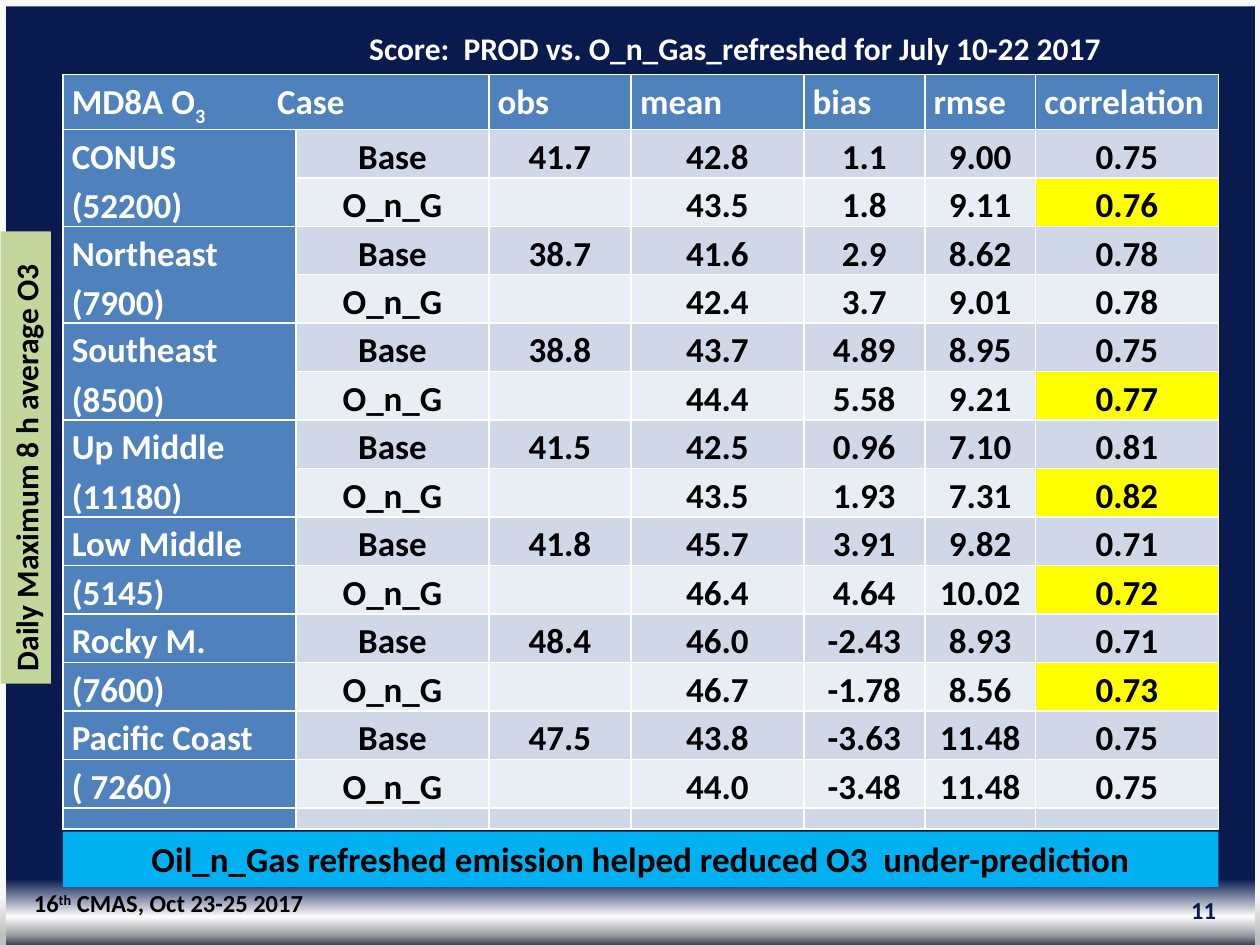
from lxml import etree
from pptx import Presentation, util as u
from pptx.dml.color import RGBColor
from pptx.enum import shapes, text
from pptx.oxml.ns import qn

FONT = "Calibri"
COLORS = {
    "navy": "091A4F", "white": "FFFFFF", "black": "000000", "header": "4F81BD",
    "base": "D0D8E8", "refreshed": "E9EDF4", "improved": "FFFF00",
    "green": "C3D69B", "cyan": "00B0F0", "edge": "F8F8F8",
}
BACKDROP = [(93, COLORS["navy"]), (97, "FEFEFE"), (99, "9799A0"), (100, "3C414E")]
EDGE_FADE = [(0, COLORS["edge"]), (95, "F5F5F5"), (99, "BFBFBF")]

TITLE = "Score:  PROD vs. O_n_Gas_refreshed for July 10-22 2017"
SIDE_LABEL = "Daily Maximum 8 h average O3"
CONCLUSION = "Oil_n_Gas refreshed emission helped reduced O3  under-prediction"
FOOTER = [("16", 0), ("th", 30), (" CMAS, Oct 23-25 2017", 0)]
PAGE = "11"

CORNER = [("MD8A O", 0), ("3", -25), ("\tCase", 0)]
HEADINGS = ["obs", "mean", "bias", "rmse", "correlation"]
CASES = ("Base", "O_n_G")
# region, sample count, observed, then mean, bias, rmse, correlation of each case
REGIONS = [
    ("CONUS", "(52200)", "41.7", "42.8 1.1 9.00 0.75", "43.5 1.8 9.11 0.76"),
    ("Northeast", "(7900)", "38.7", "41.6 2.9 8.62 0.78", "42.4 3.7 9.01 0.78"),
    ("Southeast", "(8500)", "38.8", "43.7 4.89 8.95 0.75", "44.4 5.58 9.21 0.77"),
    ("Up Middle", "(11180)", "41.5", "42.5 0.96 7.10 0.81", "43.5 1.93 7.31 0.82"),
    ("Low Middle", "(5145)", "41.8", "45.7 3.91 9.82 0.71", "46.4 4.64 10.02 0.72"),
    ("Rocky M.", "(7600)", "48.4", "46.0 -2.43 8.93 0.71", "46.7 -1.78 8.56 0.73"),
    ("Pacific Coast", "( 7260)", "47.5", "43.8 -3.63 11.48 0.75", "44.0 -3.48 11.48 0.75"),
]
MERGED_REGIONS = 4  # the first regions share one label cell over both cases
COLUMNS = [1.85, 1.53, 1.13, 1.37, 0.96, 0.88, 1.45]
HEADER_ROW, CASE_ROW, LAST_ROW = 0.38, 0.385, 0.17
LEFT, TABLE_TOP = 0.5, 0.59
CASE_TAB = 1.63

LEFT_ALIGN, CENTER, RIGHT = (text.PP_ALIGN.LEFT, text.PP_ALIGN.CENTER, text.PP_ALIGN.RIGHT)


def rgb(name):
    return RGBColor.from_string(COLORS[name])


def inches(*lengths):
    return [u.Inches(length) for length in lengths]


def fade_down(fill, owner, stops):
    """Fill with a top-to-bottom gradient; owner is the XML element holding the fill."""
    fill.gradient()
    fill.gradient_angle = 270
    stop_list = next(owner.iter(qn("a:gsLst")))
    for stop in list(stop_list):
        stop_list.remove(stop)
    for percent, color in stops:
        stop = etree.SubElement(stop_list, qn("a:gs"), pos=str(percent * 1000))
        etree.SubElement(stop, qn("a:srgbClr"), val=color)


def write(frame, runs, size, color, align=LEFT_ALIGN):
    """Fill the first paragraph with a string or with (text, baseline) runs."""
    paragraph = frame.paragraphs[0]
    paragraph.alignment = align
    for words, baseline in [(runs, 0)] if isinstance(runs, str) else runs:
        run = paragraph.add_run()
        run.text = words
        font = run.font
        font.name, font.size, font.bold = FONT, u.Pt(size), True
        font.color.rgb = rgb(color)
        if baseline:
            run._r.get_or_add_rPr().set("baseline", str(baseline * 1000))
    return paragraph


def fit_frame(shape, wrap=False):
    frame = shape.text_frame
    frame.word_wrap = wrap
    frame.auto_size = text.MSO_AUTO_SIZE.SHAPE_TO_FIT_TEXT
    frame.vertical_anchor = text.MSO_ANCHOR.TOP
    return frame


def add_block(slide, box, color):
    block = slide.shapes.add_shape(shapes.MSO_SHAPE.RECTANGLE, *inches(*box))
    block.shadow.inherit = False
    block.line.fill.background()
    block.fill.solid()
    block.fill.fore_color.rgb = rgb(color)
    return block


def set_cell(cell, runs, fill, color="black", align=CENTER):
    cell.fill.solid()
    cell.fill.fore_color.rgb = rgb(fill)
    cell.margin_left = cell.margin_right = u.Inches(0.07)
    cell.margin_top = cell.margin_bottom = 0
    if runs:
        paragraph = write(cell.text_frame, runs, 20, color, align)
        paragraph.line_spacing, paragraph.space_after = 1.15, u.Pt(3)


def add_scores(slide):
    case_rows = len(REGIONS) * len(CASES)
    heights = [HEADER_ROW] + [CASE_ROW] * case_rows + [LAST_ROW]
    table = slide.shapes.add_table(
        len(heights), len(COLUMNS),
        *inches(LEFT, TABLE_TOP, sum(COLUMNS), sum(heights))).table
    for column, width in zip(table.columns, COLUMNS):
        column.width = u.Inches(width)
    for row, height in zip(table.rows, heights):
        row.height = u.Inches(height)

    corner = table.cell(0, 0)
    corner.merge(table.cell(0, 1))
    set_cell(corner, CORNER, "header", "white", LEFT_ALIGN)
    tabs = etree.SubElement(corner.text_frame.paragraphs[0]._p.pPr, qn("a:tabLst"))
    etree.SubElement(tabs, qn("a:tab"), pos=str(u.Inches(CASE_TAB)), algn="l")
    for col, heading in enumerate(HEADINGS, 2):
        set_cell(table.cell(0, col), heading, "header", "white", LEFT_ALIGN)

    for index, (region, count, observed, *scores) in enumerate(REGIONS):
        top = 1 + index * len(CASES)
        labels = [region, count]
        if index < MERGED_REGIONS:
            table.cell(top, 0).merge(table.cell(top + 1, 0))
            labels = [f"{region} {count}", ""]
        base, refreshed = [line.split() for line in scores]
        improved = float(refreshed[-1]) > float(base[-1])
        rows = [[CASES[0], observed, *base], [CASES[1], "", *refreshed]]
        for offset, (label, values) in enumerate(zip(labels, rows)):
            set_cell(table.cell(top + offset, 0), label, "header", "white", LEFT_ALIGN)
            for col, value in enumerate(values, 1):
                set_cell(table.cell(top + offset, col), value,
                         ("base", "refreshed")[offset])
        if improved:
            mark = table.cell(top + 1, len(COLUMNS) - 1).fill
            mark.fore_color.rgb = rgb("improved")

    for col in range(len(COLUMNS)):
        spacer = table.cell(len(heights) - 1, col)
        set_cell(spacer, "", "base" if col else "header")
        # a small font keeps the empty row thin
        etree.SubElement(spacer.text_frame.paragraphs[0]._p, qn("a:endParaRPr"), sz="800")


def main():
    deck = Presentation()
    deck.slide_width, deck.slide_height = inches(10, 7.5)
    slide = deck.slides.add_slide(deck.slide_layouts[5])
    fade_down(slide.background.fill, slide.element, BACKDROP)

    for left in (0, 9.96):
        edge = add_block(slide, (left, 0, 0.05, 7.5), "edge")
        fade_down(edge.fill, edge.element, EDGE_FADE)
    add_block(slide, (0.02, 0, 9.98, 0.05), "edge")

    title = slide.shapes.title
    title.left, title.top, title.width, title.height = inches(2.83, 0.18, 6.07, 0.4)
    write(fit_frame(title), TITLE, 18, "white")

    side = add_block(slide, (-1.59, 3.43, 3.59, 0.4), "green")
    side.rotation = 270
    write(fit_frame(side), SIDE_LABEL, 18, "black")

    conclusion = add_block(slide, (LEFT, 6.6, sum(COLUMNS), 0.44), "cyan")
    write(fit_frame(conclusion, wrap=True), CONCLUSION, 20, "black", CENTER)

    add_scores(slide)

    footer = slide.shapes.add_textbox(*inches(0.17, 7, 2.35, 0.34))
    write(fit_frame(footer), FOOTER, 14, "black")
    page = slide.shapes.add_textbox(*inches(7.42, 7.02, 2.33, 0.4)).text_frame
    page.word_wrap = True
    page.vertical_anchor = text.MSO_ANCHOR.MIDDLE
    write(page, PAGE, 14, "navy", RIGHT)
    deck.save("out.pptx")


if __name__ == "__main__":
    main()
